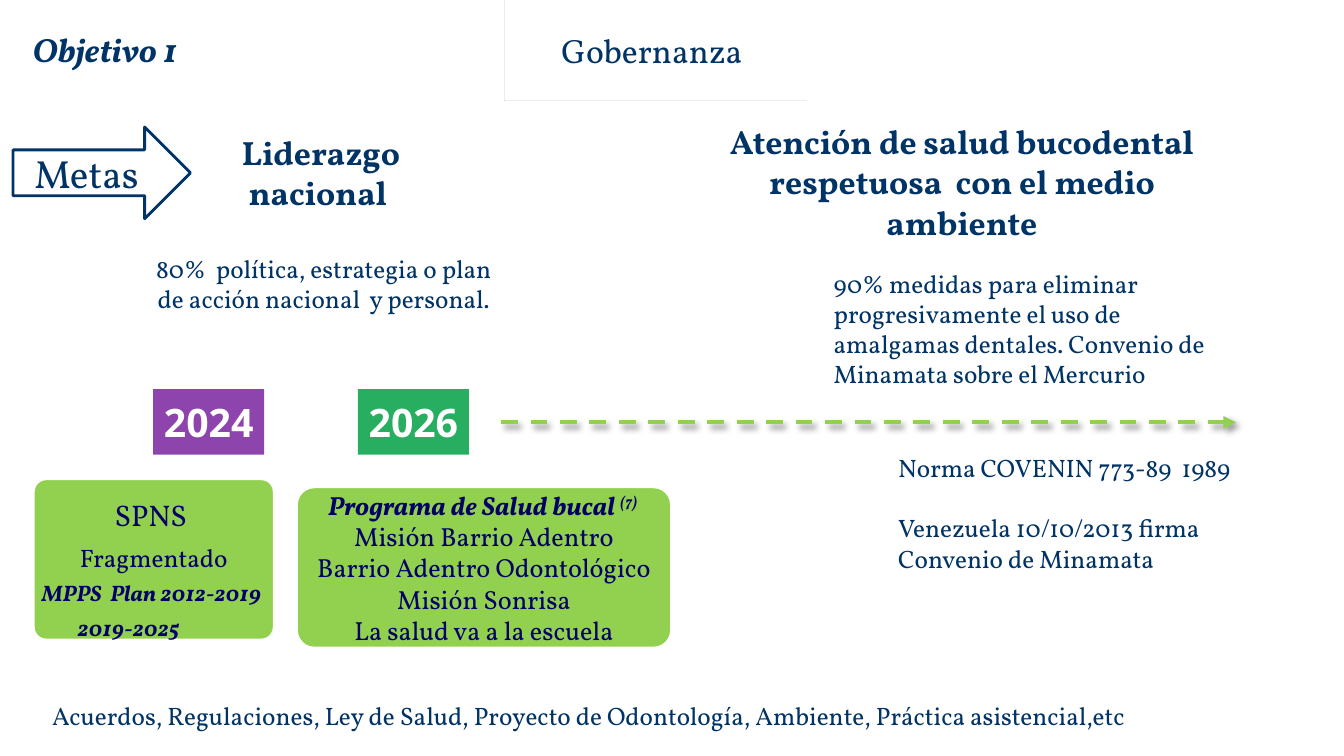
"""Build the slide on the goals of Objective 1, governance of oral health."""
import math
from dataclasses import dataclass, field
from typing import Any, Optional

import pptx
import pptx.dml.color
import pptx.enum.dml
import pptx.enum.shapes
import pptx.enum.text
import pptx.oxml
import pptx.oxml.ns
import pptx.util

Inches = pptx.util.Inches
Pt = pptx.util.Pt
RGBColor = pptx.dml.color.RGBColor
KIND = pptx.enum.shapes.MSO_SHAPE
ALIGN = pptx.enum.text.PP_ALIGN
ANCHOR = pptx.enum.text.MSO_ANCHOR

NAVY = RGBColor(0x00, 0x33, 0x66)
INK = RGBColor(0x00, 0x00, 0x66)
WHITE = RGBColor(0xFF, 0xFF, 0xFF)
LIME = RGBColor(0x92, 0xD0, 0x50)
GREEN = RGBColor(0x27, 0xAE, 0x61)
PURPLE = RGBColor(0x8D, 0x44, 0xAD)
MAUVE = RGBColor(0x80, 0x64, 0xA2)

BODY = {"name": "Vollkorn", "size": Pt(18), "color": NAVY}
HEAD = BODY | {"size": Pt(24), "bold": True}
YEAR = {"name": "Open Sans", "size": Pt(28), "color": WHITE, "bold": True}
CARD = BODY | {"color": INK}
PLAN = CARD | {"size": Pt(16), "bold": True, "italic": True}
LIST = CARD | {"size": Pt(18.7)}
LEAD = LIST | {"bold": True, "italic": True}
MID = {"alignment": ALIGN.CENTER}
TIGHT = MID | {"line_spacing": 0.9}


@dataclass
class Para:
    text: str
    font: dict[str, Any]
    form: dict[str, Any] = field(default_factory=dict)
    indent: float = 0
    note: str = ""


@dataclass
class Box:
    left: float
    top: float
    width: float
    height: float
    paras: list[Para]
    kind: Optional[KIND] = None
    fill: Optional[RGBColor] = None
    line: Optional[RGBColor] = None
    round: Optional[float] = None
    frame: dict[str, Any] = field(default_factory=dict)


CENTER = {"vertical_anchor": ANCHOR.MIDDLE}
FLUSH = {f"margin_{side}": 0 for side in ("left", "right", "top", "bottom")}

BOXES = [
    Box(2.3, 1.26, 1.82, 0.91, [Para("Liderazgo", HEAD), Para(" nacional", HEAD)]),
    Box(1.45, 2.46, 3.52, 1.31, [
        Para("80%  política, estrategia o plan de acción nacional  y personal.", BODY, MID)]),
    Box(6.88, 1.15, 5.32, 1.31, [
        Para("Atención de salud bucodental respetuosa  con el medio ambiente", HEAD, MID)]),
    Box(8.17, 2.61, 3.93, 1.31, [
        Para("90% medidas para eliminar progresivamente el uso de amalgamas dentales. "
             "Convenio de Minamata sobre el Mercurio", BODY)]),
    Box(8.81, 4.44, 3.72, 1.31, [
        Para("Norma COVENIN 773-89  1989", BODY),
        Para("Venezuela 10/10/2013 firma Convenio de Minamata", BODY, {"space_before": Pt(21.4)})]),
    Box(0.42, 6.88, 11.84, 0.41, [
        Para("Acuerdos, Regulaciones, Ley de Salud, Proyecto de Odontología, Ambiente, "
             "Práctica asistencial,etc", BODY, {"line_spacing": 1.07})]),
    Box(0.13, 0.16, 1.82, 0.65, [Para("Objetivo 1", HEAD | {"italic": True}, MID)], frame=CENTER),
    Box(0.13, 1.26, 1.76, 0.91, [Para("Metas ", BODY | {"size": Pt(28)}, MID)],
        KIND.RIGHT_ARROW, line=NAVY, frame=CENTER),
    Box(1.52, 3.86, 1.1, 0.65, [Para("2024", YEAR, MID)], KIND.RECTANGLE, PURPLE, frame=CENTER),
    Box(3.55, 3.86, 1.1, 0.65, [Para("2026", YEAR, MID)], KIND.RECTANGLE, GREEN, frame=CENTER),
    Box(0.33, 4.75, 2.39, 1.6, [
        Para("SPNS ", CARD | {"size": Pt(21.3)}, TIGHT | {"space_after": Pt(9)}),
        Para("Fragmentado", CARD, TIGHT | {"space_after": Pt(6.5)}),
        Para("MPPS  Plan 2012-2019 ", PLAN, TIGHT | {"space_after": Pt(6)}),
        Para("2019-2025", PLAN, indent=0.4)],
        KIND.ROUNDED_RECTANGLE, LIME, WHITE, 0.08,
        FLUSH | {"margin_top": Inches(0.18), "vertical_anchor": ANCHOR.TOP}),
    Box(2.94, 4.83, 3.72, 1.6, [
        Para("Programa de Salud bucal ", LEAD, MID, note="(7) "),
        *(Para(text, LIST, MID) for text in (
            "Misión Barrio Adentro", "Barrio Adentro Odontológico",
            "Misión Sonrisa", "La salud va a la escuela"))],
        KIND.ROUNDED_RECTANGLE, LIME, WHITE, 0.11, FLUSH | CENTER),
]


def dress(target: Any, form: dict[str, Any]) -> None:
    for name, value in form.items():
        if name == "color":
            target.color.rgb = value
        else:
            setattr(target, name, value)


def write(shape: Any, box: Box) -> None:
    frame = shape.text_frame
    dress(frame, {"word_wrap": True} | box.frame)
    for index, para in enumerate(box.paras):
        line = frame.add_paragraph() if index else frame.paragraphs[0]
        dress(line, {"alignment": ALIGN.LEFT} | para.form)
        if para.indent:
            line._p.get_or_add_pPr().set("marL", str(Inches(para.indent)))
        for text, base in ((para.text, "0"), (para.note, "30000")):
            if text:
                run = line.add_run()
                run.text = text
                dress(run.font, para.font)
                run._r.get_or_add_rPr().set("baseline", base)


def paint(shape: Any, box: Box) -> None:
    shape.shadow.inherit = False
    if box.fill is None:
        shape.fill.background()
    else:
        shape.fill.solid()
        shape.fill.fore_color.rgb = box.fill
    if box.line is None:
        shape.line.fill.background()
    else:
        shape.line.color.rgb = box.line
        shape.line.width = Pt(2)
    if box.round is not None:
        shape.adjustments[0] = box.round


def place(slide: Any, box: Box) -> None:
    area = [Inches(part) for part in (box.left, box.top, box.width, box.height)]
    if box.kind is None:
        shape = slide.shapes.add_textbox(*area)
    else:
        shape = slide.shapes.add_shape(box.kind, *area)
        paint(shape, box)
    write(shape, box)


def arc(x: float, y: float, size: float, start: int, sweep: int) -> list[tuple[float, float]]:
    turns = [math.radians(start + sweep * step / 8) for step in range(9)]
    return [(x + size * math.cos(turn), y + size * math.sin(turn)) for turn in turns]


def bracket(slide: Any) -> None:
    box = Box(4.65, 0.16, 3.22, 0.72, [Para("Gobernanza ", HEAD | {"bold": False}, MID)],
              fill=MAUVE, frame=CENTER)
    points = [
        *arc(4.79, 0.3, 0.14, 180, 90), (7.73, 0.16), (7.79, 0.17), (7.83, 0.2), (7.87, 0.29),
        *arc(4.88, 0.35, 0.06, 270, -90), *arc(4.88, 0.69, 0.06, 180, -90),
        (7.87, 0.75), (7.83, 0.84), (7.79, 0.87), (7.73, 0.88), *arc(4.79, 0.74, 0.14, 90, 90)]
    pen = slide.shapes.build_freeform(*points[0], scale=Inches(1))
    pen.add_line_segments(points[1:], close=True)
    shape = pen.convert_to_shape()
    paint(shape, box)
    write(shape, box)


def arrow(slide: Any) -> None:
    link = slide.shapes.add_connector(
        pptx.enum.shapes.MSO_CONNECTOR.STRAIGHT,
        Inches(4.97), Inches(4.19), Inches(12.26), Inches(4.19))
    dress(link.line, {"color": LIME, "width": Pt(3),
                      "dash_style": pptx.enum.dml.MSO_LINE.DASH})
    space = pptx.oxml.ns.nsdecls("a")
    link.line._get_or_add_ln().append(
        pptx.oxml.parse_xml(f'<a:tailEnd {space} type="triangle"/>'))
    link._element.spPr.append(pptx.oxml.parse_xml(
        f'<a:effectLst {space}><a:outerShdw blurRad="{Pt(4)}" dist="{Pt(3)}" dir="2700000">'
        '<a:srgbClr val="000000"><a:alpha val="40000"/></a:srgbClr>'
        '</a:outerShdw></a:effectLst>'))


def main() -> None:
    deck = pptx.Presentation()
    deck.slide_width, deck.slide_height = Inches(13.33), Inches(7.5)
    slide = deck.slides.add_slide(deck.slide_layouts[6])
    for box in BOXES:
        place(slide, box)
    bracket(slide)
    arrow(slide)
    deck.save("out.pptx")


if __name__ == "__main__":
    main()
